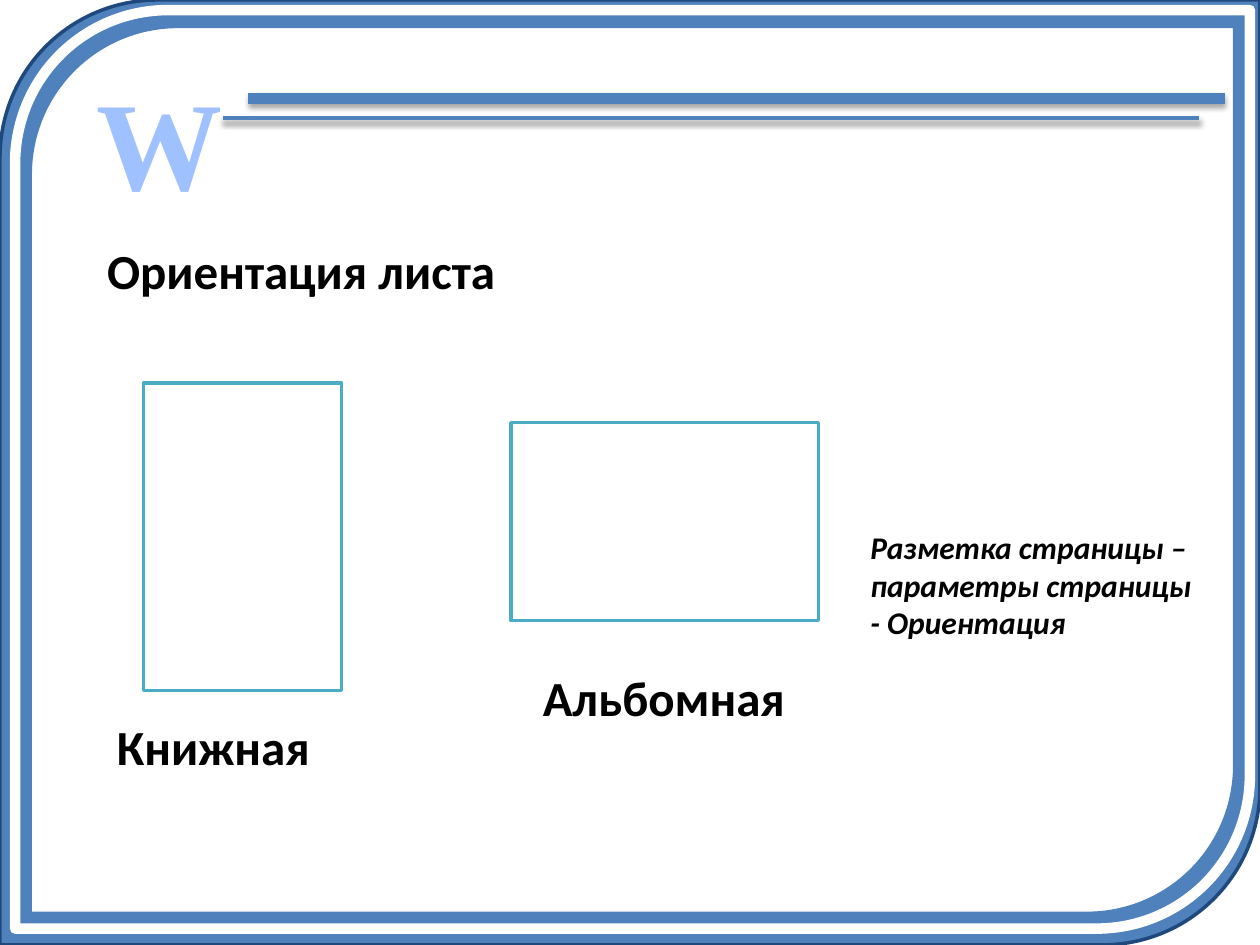
from pptx import Presentation
from pptx.dml.color import RGBColor
from pptx.enum.shapes import MSO_CONNECTOR, MSO_SHAPE
from pptx.enum.text import MSO_ANCHOR, MSO_AUTO_SIZE, PP_ALIGN
from pptx.oxml import parse_xml
from pptx.oxml.ns import nsdecls
from pptx.util import Inches, Pt

BLUE = RGBColor(0x4F, 0x81, 0xBD)
NAVY = RGBColor(0x1F, 0x49, 0x7D)
TEAL = RGBColor(0x4B, 0xAC, 0xC6)
PALE_BLUE = RGBColor(0xA0, 0xC1, 0xFF)
BLACK = RGBColor(0, 0, 0)
WHITE = RGBColor(0xFF, 0xFF, 0xFF)

RECT = MSO_SHAPE.RECTANGLE
FRAME = MSO_SHAPE.ROUND_2_DIAG_RECTANGLE
STRAIGHT = MSO_CONNECTOR.STRAIGHT
LEFT, CENTER = PP_ALIGN.LEFT, PP_ALIGN.CENTER
TOP = MSO_ANCHOR.TOP
GROW = MSO_AUTO_SIZE.SHAPE_TO_FIT_TEXT

COLUMNS, ROWS = 100, 75
SHADOW = (
    f'<a:effectLst {nsdecls("a")}>'
    '<a:outerShdw blurRad="40000" dist="23000" dir="5400000" rotWithShape="0">'
    '<a:srgbClr val="000000"><a:alpha val="35000"/></a:srgbClr>'
    '</a:outerShdw></a:effectLst>'
)


class SlideBuilder:
    """Places styled elements on a grid of COLUMNS by ROWS."""

    def __init__(self, prs):
        self.slide = prs.slides.add_slide(prs.slide_layouts[5])
        self.column = prs.slide_width / COLUMNS
        self.row = prs.slide_height / ROWS

    def box(self, x, y, w, h):
        return (round(x * self.column), round(y * self.row),
                round(w * self.column), round(h * self.row))

    def shape(self, kind, area, fill, line, width, rotation=0):
        sp = self.slide.shapes.add_shape(kind, *self.box(*area))
        sp.shadow.inherit = False
        sp.rotation = rotation
        if fill is None:
            sp.fill.background()
        else:
            sp.fill.solid()
            sp.fill.fore_color.rgb = fill
        sp.line.color.rgb = line
        sp.line.width = Pt(width)

    def rule(self, x, y, length, width):
        left, top, run, _ = self.box(x, y, length, 0)
        line = self.slide.shapes.add_connector(STRAIGHT, left, top, left + run, top)
        line.line.color.rgb = BLUE
        line.line.width = Pt(width)
        line._element.spPr.append(parse_xml(SHADOW))

    def set_text(self, sp, text, size, font="Calibri", color=BLACK, align=LEFT, italic=False):
        tf = sp.text_frame
        tf.text = text
        tf.word_wrap = True
        tf.auto_size = GROW
        tf.vertical_anchor = TOP
        p = tf.paragraphs[0]
        p.alignment = align
        p.font.name = font
        p.font.size = Pt(size)
        p.font.bold = True
        p.font.italic = italic
        p.font.color.rgb = color

    def text(self, area, text, size, **style):
        sp = self.slide.shapes.add_textbox(*self.box(*area))
        self.set_text(sp, text, size, **style)

    def title(self, area, text, size):
        sp = self.slide.shapes.title
        sp.left, sp.top, sp.width, sp.height = self.box(*area)
        self.set_text(sp, text, size)
        # Bring the title in front of the frame
        self.slide.shapes._spTree.append(sp._element)


def main():
    prs = Presentation()
    prs.slide_width, prs.slide_height = Inches(10), Inches(7.5)
    s = SlideBuilder(prs)

    # Frame with the header letter and rules
    s.shape(FRAME, (0, 0, COLUMNS, ROWS), BLUE, NAVY, 2)
    s.shape(FRAME, (2.4, 2.1, 95.6, 70.4), WHITE, BLUE, 2)
    s.text((4.8, 4.6, 15.7, 13.5), "W", 72, font="Times New Roman",
           color=PALE_BLUE, align=CENTER)
    s.rule(19.7, 7.8, 77.5, 6)
    s.rule(17.7, 9.4, 77.5, 2.25)
    s.shape(FRAME, (1.2, 0.8, 98, 72.9), None, WHITE, 6)

    s.title((7.5, 18.6, 65.4, 5.7), "Ориентация листа", 28)

    # The same sheet, upright and turned
    for x, y, rotation in ((11.4, 30.4, 0), (44.9, 29.2, 90)):
        s.shape(RECT, (x, y, 15.7, 24.4), WHITE, TEAL, 2, rotation)

    # Captions
    for x, y, caption in ((8.3, 56.4, "Книжная"), (42.1, 52.5, "Альбомная")):
        s.text((x, y, 23.6, 5.7), caption, 28)

    # Menu hint
    s.text((68.1, 41.4, 27.6, 10.1),
           "Разметка страницы – параметры страницы - Ориентация", 18, italic=True)

    prs.save("out.pptx")


if __name__ == "__main__":
    main()
